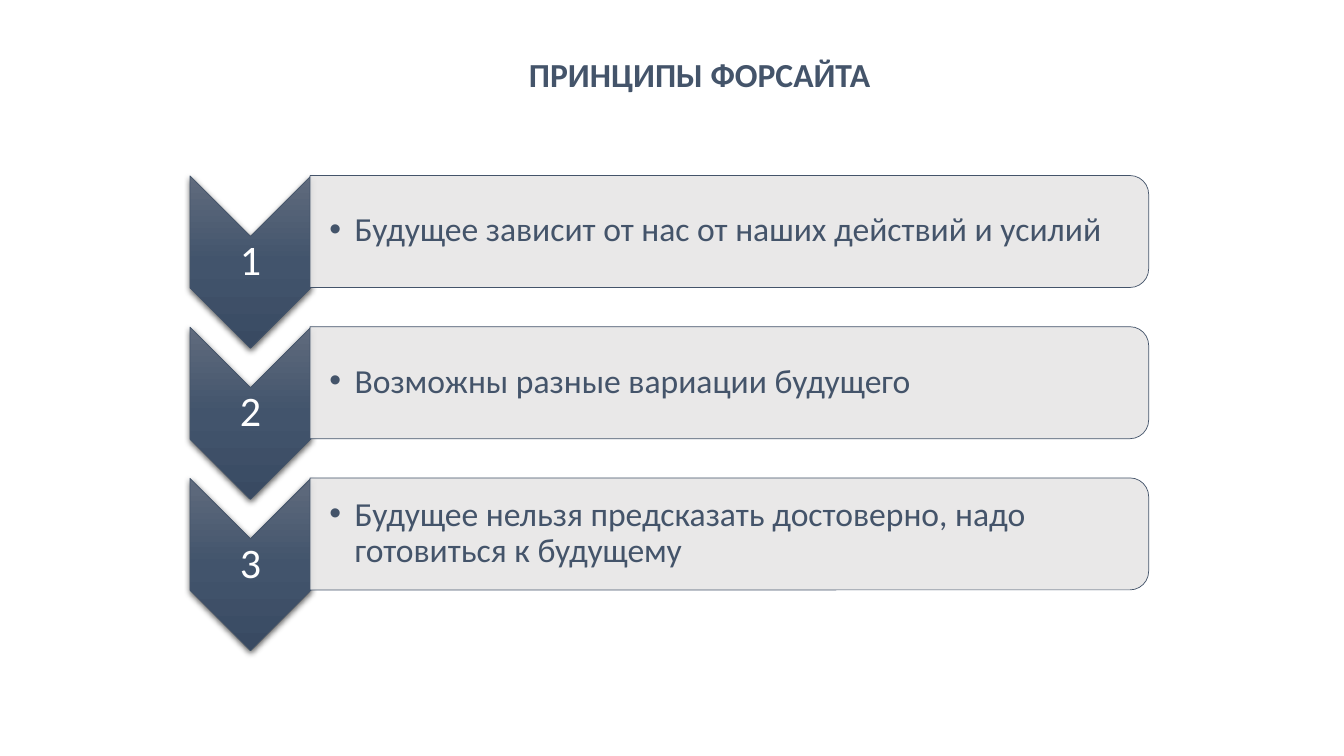
from dataclasses import dataclass
from pptx import Presentation
from pptx.dml.color import RGBColor
from pptx.enum.shapes import MSO_SHAPE
from pptx.enum.text import MSO_ANCHOR, PP_ALIGN
from pptx.oxml import parse_xml
from pptx.oxml.ns import nsdecls
from pptx.shapes.autoshape import Shape
from pptx.slide import Slide
from pptx.text.text import TextFrame
from pptx.util import Pt

FONT = "Calibri"
COLORS = {"ink": "44546A", "panel": "E7E6E6", "white": "FFFFFF", "black": "000000",
          "top": "606B7D", "mid": "42546C", "low": "394A62"}
PITCH = 108  # distance from one principle to the next
INSET = 1.5


@dataclass
class Item:
    mark: str
    text: str


ITEMS = [
    Item("1", "Будущее зависит от нас от наших действий и усилий"),
    Item("2", "Возможны разные вариации будущего"),
    Item("3", "Будущее нельзя предсказать достоверно, надо готовиться к будущему"),
]


def color(name: str) -> RGBColor:
    return RGBColor.from_string(COLORS[name])


def write(frame: TextFrame, text: str, size: float, tone: str, bold: bool = False) -> None:
    run = frame.paragraphs[0].add_run()
    run.text = text
    run.font.name, run.font.size, run.font.bold = FONT, Pt(size), bold
    run.font.color.rgb = color(tone)


def add_turned(slide: Slide, kind: MSO_SHAPE, mid_x: float, mid_y: float,
               width: float, height: float) -> Shape:
    """Add a shape turned a quarter; width and height are as seen on the slide."""
    shape = slide.shapes.add_shape(kind, Pt(mid_x - height / 2), Pt(mid_y - width / 2),
                                   Pt(height), Pt(width))
    shape.rotation = 90
    shape.line.color.rgb = color("ink")
    shape.line.width = Pt(0.5)
    return shape


def add_box(slide: Slide, left: float, top: float, width: float, height: float,
            inset: float = INSET) -> TextFrame:
    frame = slide.shapes.add_textbox(Pt(left), Pt(top), Pt(width), Pt(height)).text_frame
    frame.word_wrap = True
    frame.vertical_anchor = MSO_ANCHOR.MIDDLE
    frame.margin_left = Pt(inset)
    frame.margin_top = frame.margin_right = frame.margin_bottom = Pt(INSET)
    frame.paragraphs[0].line_spacing = 0.9
    return frame


def shade(shape: Shape) -> None:
    """Give a shape the vertical gradient and the soft shadow below."""
    stops = "".join(f'<a:gs pos="{pos}"><a:srgbClr val="{COLORS[name]}"/></a:gs>'
                    for pos, name in ((0, "top"), (50000, "mid"), (100000, "low")))
    props = shape.element.spPr
    props.insert(2, parse_xml(
        f'<a:gradFill {nsdecls("a")} rotWithShape="0"><a:gsLst>{stops}</a:gsLst>'
        '<a:lin ang="5400000" scaled="0"/></a:gradFill>'))
    props.append(parse_xml(
        f'<a:effectLst {nsdecls("a")}><a:outerShdw blurRad="{Pt(4.5)}" dist="{Pt(1.5)}" '
        f'dir="5400000" rotWithShape="0"><a:srgbClr val="{COLORS["black"]}">'
        '<a:alpha val="63000"/></a:srgbClr></a:outerShdw></a:effectLst>'))


def add_item(slide: Slide, item: Item, down: float) -> None:
    # Numbered chevron
    shade(add_turned(slide, MSO_SHAPE.CHEVRON, 178.9, 187.2 + down, 86.4, 123.1))
    frame = add_box(slide, 135.7, 168.8 + down, 86.4, 36.7)
    frame.paragraphs[0].alignment = PP_ALIGN.CENTER
    write(frame, item.mark, 30, "white")

    # Panel
    panel = add_turned(slide, MSO_SHAPE.ROUND_2_SAME_RECTANGLE, 521, 165.4 + down, 599, 80)
    panel.shadow.inherit = False
    panel.fill.solid()
    panel.fill.fore_color.rgb = color("panel")
    tint = panel.element.spPr.find(".//{*}solidFill/{*}srgbClr")
    tint.append(parse_xml(f'<a:alpha {nsdecls("a")} val="90000"/>'))

    # Bulleted text
    frame = add_box(slide, 221.8, 129 + down, 595, 72, 13.5)
    props = frame.paragraphs[0]._p.get_or_add_pPr()
    props.set("marL", str(Pt(18)))
    props.set("indent", str(-Pt(18)))
    props.append(parse_xml(f'<a:buFont {nsdecls("a")} typeface="Arial"/>'))
    props.append(parse_xml(f'<a:buChar {nsdecls("a")} char="•"/>'))
    write(frame, item.text, 24, "ink")


def main() -> None:
    deck = Presentation()
    deck.slide_width, deck.slide_height = Pt(960), Pt(540)
    slide = deck.slides.add_slide(deck.slide_layouts[5])

    # Title
    title = slide.shapes.title
    title.left, title.top, title.width, title.height = Pt(273), Pt(34.8), Pt(453.6), Pt(36)
    title.text_frame.vertical_anchor = MSO_ANCHOR.MIDDLE
    title.text_frame.paragraphs[0].alignment = PP_ALIGN.CENTER
    write(title.text_frame, "ПРИНЦИПЫ ФОРСАЙТА", 24, "ink", bold=True)

    # Principles
    for row, item in enumerate(ITEMS):
        add_item(slide, item, row * PITCH)
    deck.save("out.pptx")


if __name__ == "__main__":
    main()
